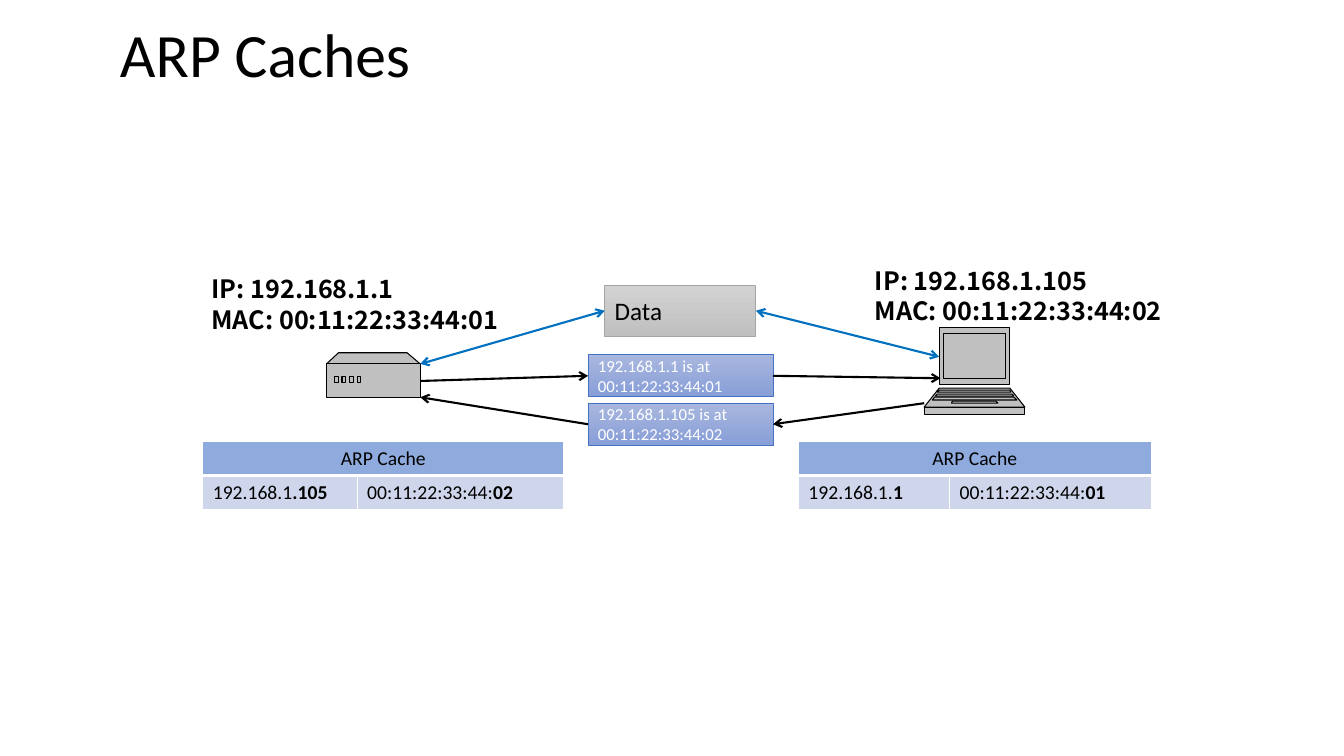
from copy import deepcopy
from typing import NamedTuple

from lxml import etree
from pptx import Presentation
from pptx.dml.color import RGBColor
from pptx.enum import shapes as kinds, text as texts
from pptx.oxml import ns
from pptx.util import Cm, Pt

BLACK = RGBColor(0x00, 0x00, 0x00)
WHITE = RGBColor(0xFF, 0xFF, 0xFF)
BLUE = RGBColor(0x00, 0x70, 0xC0)
SILVER = RGBColor(0xC0, 0xC0, 0xC0)
HEAD = RGBColor(0x8F, 0xAA, 0xDC)
BODY = RGBColor(0xCF, 0xD5, 0xEA)
GREYS = RGBColor(0xD2, 0xD2, 0xD2), SILVER, RGBColor(0xA5, 0xA5, 0xA5)
BLUES = (RGBColor(0xA8, 0xB7, 0xDF), RGBColor(0x88, 0x9E, 0xD7),
         RGBColor(0x44, 0x72, 0xC4))
LEFT, MID = texts.PP_ALIGN.LEFT, texts.PP_ALIGN.CENTER


class Quad(NamedTuple):
    """Four-sided part: top edge, bottom edge, in hundredths of a cm."""
    top: int
    low: int
    left: int
    right: int
    lowleft: int
    lowright: int


class Box(NamedTuple):
    text: str
    x: float
    y: float
    w: float
    h: float
    size: int
    ink: RGBColor
    tones: tuple  # gradient top, gradient bottom, outline


class Arrow(NamedTuple):
    x1: float
    y1: float
    x2: float
    y2: float
    ink: RGBColor
    ends: tuple


class Label(NamedTuple):
    text: str
    x: float
    y: float


class Cache(NamedTuple):
    x: float
    cols: tuple
    cells: tuple  # text after "|" is bold


def write(frame, text: str, *, size: float, ink=BLACK, font="Calibri",
          bold=False, align=LEFT, lead=None) -> None:
    for i, line in enumerate(text.split("\n")):
        para = frame.add_paragraph() if i else frame.paragraphs[0]
        para.alignment = align
        if lead:
            para.line_spacing = lead
        for j, part in enumerate(line.split("|")):
            run = para.add_run()
            run.text = part
            run.font.name, run.font.size = font, Pt(size)
            run.font.bold = bold or j > 0
            run.font.color.rgb = ink


def draw_device(slide, quads: list[Quad]) -> None:
    def ring(q: Quad) -> list:
        return [(q.left, q.top), (q.right, q.top),
                (q.lowright, q.low), (q.lowleft, q.low)]

    first, *rest = map(ring, quads)
    pen = slide.shapes.build_freeform(*first[0], scale=Cm(0.01))
    pen.add_line_segments(first[1:])
    for pts in rest:
        pen.move_to(*pts[0])
        pen.add_line_segments(pts[1:])
    shape = pen.convert_to_shape()
    shape.shadow.inherit = False
    shape.fill.solid()
    shape.fill.fore_color.rgb = SILVER
    shape.line.color.rgb, shape.line.width = BLACK, Pt(0.75)

    # One path for each part, so that overlapping parts all stay filled
    path = shape.element.xpath(".//a:path")[0]
    shell = deepcopy(path)
    for step in list(shell):
        shell.remove(step)
    for step in list(path):
        if step.tag == ns.qn("a:moveTo"):
            part = deepcopy(shell)
            path.addprevious(part)
        part.append(step)
    path.getparent().remove(path)


def draw_box(slide, box: Box) -> None:
    shape = slide.shapes.add_shape(kinds.MSO_SHAPE.RECTANGLE, Cm(box.x),
                                   Cm(box.y), Cm(box.w), Cm(box.h))
    shape.shadow.inherit = False
    shape.fill.gradient()
    shape.fill.gradient_angle = 270
    for stop, tone in zip(shape.fill.gradient_stops, box.tones):
        stop.color.rgb = tone
    shape.line.color.rgb, shape.line.width = box.tones[2], Pt(0.5)
    shape.text_frame.vertical_anchor = texts.MSO_ANCHOR.MIDDLE
    write(shape.text_frame, box.text, size=box.size, ink=box.ink)


def draw_arrow(slide, arrow: Arrow) -> None:
    line = slide.shapes.add_connector(
        kinds.MSO_CONNECTOR.STRAIGHT, Cm(arrow.x1), Cm(arrow.y1),
        Cm(arrow.x2), Cm(arrow.y2))
    line.line.color.rgb, line.line.width = arrow.ink, Pt(1.5)
    for end in arrow.ends:
        etree.SubElement(line.line._ln, ns.qn(f"a:{end}"), type="arrow")
    etree.SubElement(line.element.spPr, ns.qn("a:effectLst"))


def draw_label(slide, label: Label) -> None:
    frame = slide.shapes.add_textbox(Cm(label.x), Cm(label.y),
                                     Cm(8.1), Cm(1.8)).text_frame
    frame.word_wrap = False
    frame.auto_size = texts.MSO_AUTO_SIZE.SHAPE_TO_FIT_TEXT
    write(frame, label.text, size=18, bold=True, font="Noto Sans CJK KR")


def edge_cell(cell, low: float) -> None:
    props = cell._tc.get_or_add_tcPr()
    for i, side in enumerate(("lnL", "lnR", "lnT", "lnB")):
        width = Pt(low if side == "lnB" else 1)
        edge = etree.Element(ns.qn(f"a:{side}"), w=str(width))
        fill = etree.SubElement(edge, ns.qn("a:solidFill"))
        etree.SubElement(fill, ns.qn("a:srgbClr"), val=str(WHITE))
        props.insert(i, edge)


def draw_cache(slide, cache: Cache) -> None:
    table = slide.shapes.add_table(2, 2, Cm(cache.x), Cm(11.13),
                                   Cm(sum(cache.cols)), Cm(1.7)).table
    table.first_row = table.horz_banding = False
    for col, width in zip(table.columns, cache.cols):
        col.width = Cm(width)
    table.cell(0, 0).merge(table.cell(0, 1))
    write(table.cell(0, 0).text_frame, "ARP Cache", size=14, align=MID)
    for c, text in enumerate(cache.cells):
        write(table.cell(1, c).text_frame, text, size=14)
    for r, (tone, low) in enumerate(((HEAD, 3), (BODY, 1))):
        for c in range(2):
            cell = table.cell(r, c)
            cell.fill.solid()
            cell.fill.fore_color.rgb = tone
            edge_cell(cell, low)


ROUTER = [Quad(889, 917, 853, 1026, 823, 1059),
          Quad(917, 1001, 823, 1059, 823, 1059)]
ROUTER += [Quad(950, 963, x, x + 9, x, x + 9) for x in range(843, 901, 19)]

LAPTOP = [Quad(826, 970, 2367, 2545, 2367, 2545),   # lid
          Quad(978, 1026, 2367, 2545, 2329, 2583),  # base
          Quad(1026, 1044, 2329, 2583, 2329, 2583),
          Quad(841, 955, 2377, 2535, 2377, 2535),   # screen
          Quad(983, 988, 2367, 2545, 2362, 2548),   # keys
          Quad(993, 998, 2362, 2550, 2357, 2555),
          Quad(1001, 1008, 2355, 2555, 2350, 2563),
          Quad(1011, 1016, 2400, 2510, 2398, 2515)]

LABELS = [Label("IP: 192.168.1.1\nMAC: 00:11:22:33:44:01", 5.08, 6.77),
          Label("IP: 192.168.1.105\nMAC: 00:11:22:33:44:02", 21.8, 6.56)]

CACHES = [Cache(5.11, (3.89, 5.21), ("192.168.1|.105", "00:11:22:33:44:|02")),
          Cache(20.12, (3.81, 5.08), ("192.168.1.|1", "00:11:22:33:44:|01"))]

BOXES = [Box("Data", 15.24, 7.2, 3.81, 1.27, 18, BLACK, GREYS),
         Box("192.168.1.1 is at 00:11:22:33:44:01",
             14.82, 8.94, 4.66, 1.06, 12, WHITE, BLUES),
         Box("192.168.1.105 is at 00:11:22:33:44:02",
             14.82, 10.16, 4.66, 1.06, 12, WHITE, BLUES)]

FROM, TO = ("headEnd",), ("tailEnd",)
ARROWS = [Arrow(10.59, 9.17, 15.24, 7.83, BLUE, FROM + TO),
          Arrow(19.05, 7.83, 23.67, 8.99, BLUE, FROM + TO),
          Arrow(10.59, 9.6, 14.82, 9.47, BLACK, TO),
          Arrow(19.48, 9.47, 23.7, 9.53, BLACK, TO),
          Arrow(19.48, 10.69, 23.29, 10.16, BLACK, FROM),
          Arrow(10.59, 10.01, 14.82, 10.69, BLACK, FROM)]


def main() -> None:
    deck = Presentation()
    deck.slide_width, deck.slide_height = Cm(33.87), Cm(19.05)
    slide = deck.slides.add_slide(deck.slide_layouts[5])

    # Title
    title = slide.shapes.title
    title.left, title.top = Cm(2.77), Cm(0.13)
    title.width, title.height = Cm(28.35), Cm(2.62)
    title.text_frame.vertical_anchor = texts.MSO_ANCHOR.MIDDLE
    write(title.text_frame, "ARP Caches", size=44, lead=0.9)

    # Devices, their addresses and caches
    for quads in (ROUTER, LAPTOP):
        draw_device(slide, quads)
    for label in LABELS:
        draw_label(slide, label)
    for cache in CACHES:
        draw_cache(slide, cache)

    # Messages between the devices
    for box in BOXES:
        draw_box(slide, box)
    for arrow in ARROWS:
        draw_arrow(slide, arrow)
    deck.save("out.pptx")


if __name__ == "__main__":
    main()
